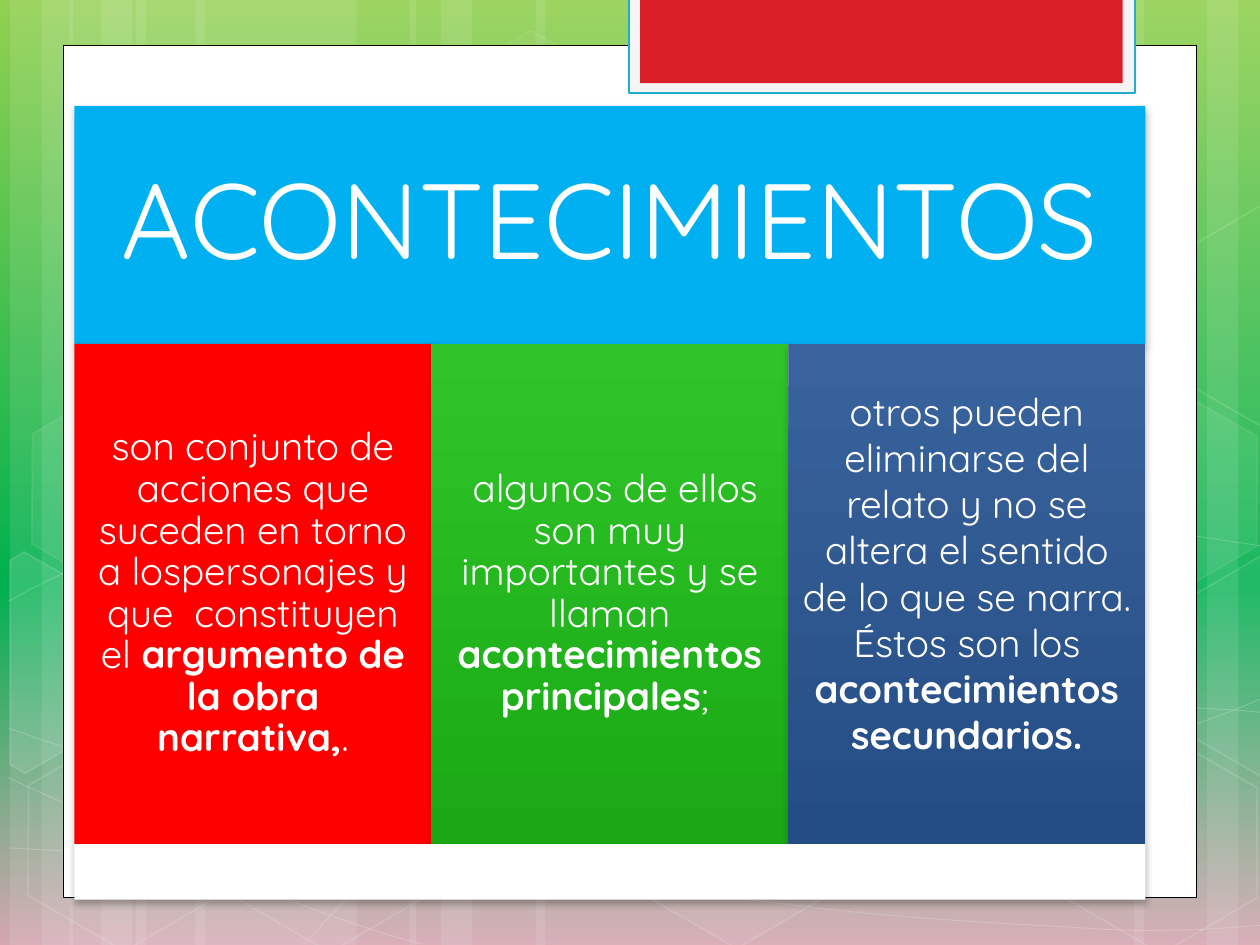
from lxml import etree
from pptx import Presentation
from pptx.dml.color import RGBColor
from pptx.enum.shapes import MSO_SHAPE
from pptx.enum.text import MSO_ANCHOR, MSO_AUTO_SIZE, PP_ALIGN
from pptx.oxml.ns import qn
from pptx.util import Inches, Pt

RECTANGLE = MSO_SHAPE.RECTANGLE
HEXAGON = MSO_SHAPE.HEXAGON
MIDDLE = MSO_ANCHOR.MIDDLE
CENTER = PP_ALIGN.CENTER
NO_AUTOFIT = MSO_AUTO_SIZE.NONE

WIDTH, HEIGHT = 10, 7.5
FONT = "Quicksand"
WHITE = "FFFFFF"
HARD_SPACE = chr(160)
LEFT, TABLE_WIDTH = 0.59, 8.5
TITLE_TOP, CARD_TOP, FOOT_TOP, FOOT_END = 0.84, 2.73, 6.7, 7.14

STRIPES = [(1.08, 1.75), (0.08, 0.5), (0.33, 0.83), (1.55, 1.75), (0.55, 0.5), (0.8, 0.83),
           (7.33, 1.75), (9.58, 0.5), (9, 0.83), (4.25, 3.08), (3.25, 0.5), (3.5, 0.83)]

CURVES = [
    [(0.07, 6.73), (0.61, 6.76), (1.15, 6.79), (1.9, 6.78), (2.65, 6.77), (3.58, 6.75),
     (4.58, 6.65), (5.58, 6.55), (7, 6.36), (7.92, 6.17), (8.83, 5.98), (9.77, 5.68), (10.07, 5.51)],
    [(0.07, 4.77), (0.36, 4.61), (0.65, 4.46), (1.21, 4.31), (1.78, 4.16), (2.59, 3.94),
     (3.47, 3.87), (4.36, 3.8), (5.44, 3.79), (6.54, 3.87), (7.64, 3.95), (9.47, 4.26), (10.07, 4.34)],
    [(0.06, 6.17), (1.27, 6.72), (2.47, 7.27), (3.34, 7.49)],
    [(0.07, 5.78), (0.38, 5.89), (0.7, 6), (1.28, 6.16), (1.86, 6.31), (2.73, 6.56),
     (3.57, 6.73), (4.4, 6.9), (5.45, 7.08), (6.28, 7.18), (7.11, 7.29), (8, 7.33),
     (8.53, 7.36), (9.05, 7.4), (9.19, 7.38), (9.45, 7.38), (9.71, 7.37), (9.89, 7.35), (10.07, 7.34)],
    [(2.42, 7.49), (2.6, 7.29), (2.78, 7.09), (3.02, 6.91), (3.26, 6.73), (3.6, 6.53),
     (3.88, 6.39), (4.16, 6.25), (4.33, 6.19), (4.7, 6.09), (5.06, 5.99), (5.73, 5.85),
     (6.08, 5.78), (6.44, 5.71), (6.49, 5.71), (6.8, 5.69), (7.11, 5.66), (7.6, 5.63),
     (7.94, 5.62), (8.29, 5.61), (8.86, 5.62), (8.86, 5.62), (9.08, 5.62), (9.3, 5.62),
     (9.53, 5.62), (9.71, 5.63), (9.88, 5.64), (9.97, 5.65), (10.06, 5.66), (10.03, 5.65), (10.06, 5.66)],
]

HEXAGONS = [(3.34, 0.36, 4, 8), (4.97, 5.89, 6, 12), (0.11, 5.91, 0, 12),
            (0.14, 3.12, 7, 8), (1.74, 5.92, 0, 12), (7.53, 4.53, 10, 12),
            (8.34, 5.93, 0, 12), (8.34, 3.14, 7, 8)]

CUT_HEXAGONS = [
    ([(0.08, 4.45), (0.19, 4.38), (0.96, 4.82), (0.95, 5.7), (0.2, 6.14), (0.08, 6.07)], 10),
    ([(9.26, 4.85), (10.01, 4.41), (10.09, 4.46), (10.09, 6.13), (10.02, 6.17), (9.26, 5.73)], 4),
    ([(9.26, 2.07), (10.01, 1.63), (10.1, 1.68), (10.09, 3.35), (10.02, 3.39), (9.26, 2.95)], 0),
]

CARDS = [
    (["FF0000"], 0.9, 0.09, [
        ("son conjunto de acciones que suceden en torno a lospersonajes y que  constituyen el"
         + HARD_SPACE, False),
        ("argumento de la obra narrativa,", True), (".", False)]),
    (["2FC529", "1AA914"], 0.9, 0.09, [
        (HARD_SPACE, True), ("algunos de ellos son muy importantes y se llaman ", False),
        ("acontecimientos principales", True), ("; ", False)]),
    (["39639D", "254D85"], 1, 0.43, [
        ("otros pueden eliminarse del relato y no se altera el sentido de lo que se narra. Éstos son los ", False),
        ("acontecimientos secundarios.", True)]),
]


def color(value):
    return RGBColor.from_string(value)


def add_color(parent, value, alpha=100):
    node = etree.SubElement(parent, qn("a:srgbClr"), val=value)
    if alpha < 100:
        etree.SubElement(node, qn("a:alpha"), val=str(alpha * 1000))


def paint(fill, value, alpha=100):
    fill.solid()
    fill.fore_color.rgb = color(value)
    if alpha < 100:
        solid = fill._xPr.find(qn("a:solidFill"))
        solid.clear()
        add_color(solid, value, alpha)


def paint_gradient(fill, stops):
    fill.gradient()
    fill.gradient_angle = 270
    stop_list = fill._xPr.find(".//" + qn("a:gsLst"))
    stop_list.clear()
    for position, value in stops:
        add_color(etree.SubElement(stop_list, qn("a:gs"), pos=str(position * 1000)), value)


def style_shape(shape, fills=(), alpha=100, line=None, line_width=1, line_alpha=100, shadow=False):
    if len(fills) > 1:
        paint_gradient(shape.fill, [(0, fills[0]), (100, fills[1])])
    elif fills and alpha:
        paint(shape.fill, fills[0], alpha)
    else:
        shape.fill.background()
    if line:
        shape.line.width = Pt(line_width)
        paint(shape.line.fill, line, line_alpha)
    else:
        shape.line.fill.background()
    shape.shadow.inherit = False
    if shadow:
        effects = shape.element.spPr.find(qn("a:effectLst"))
        outer = etree.SubElement(effects, qn("a:outerShdw"), blurRad=str(Pt(4)),
                                 dist=str(Pt(2)), dir="5400000", rotWithShape="0")
        add_color(outer, "000000", 28)


def place(shape, left, top, width, height):
    shape.left, shape.top = Inches(left), Inches(top)
    shape.width, shape.height = Inches(width), Inches(height)


def add_block(page, kind, left, top, width, height, **style):
    shape = page.shapes.add_shape(kind, *map(Inches, (left, top, width, height)))
    style_shape(shape, **style)
    return shape


def add_outline(page, points, close, **style):
    corners = [(Inches(x), Inches(y)) for x, y in points]
    builder = page.shapes.build_freeform(*corners[0])
    builder.add_line_segments(corners[1:], close=close)
    outline = builder.convert_to_shape()
    style_shape(outline, **style)
    return outline


def add_curve(page, knots, **style):
    curve = add_outline(page, knots, False, **style)
    segments = list(curve.element.iter(qn("a:lnTo")))
    for start in range(0, len(segments), 3):
        bend = etree.SubElement(segments[start].getparent(), qn("a:cubicBezTo"))
        for segment in segments[start:start + 3]:
            bend.append(segment[0])
            segment.getparent().remove(segment)


def write_text(box, spans, size, margin, bottom, spacing):
    frame = box.text_frame
    frame.word_wrap = True
    frame.auto_size = NO_AUTOFIT
    frame.vertical_anchor = MIDDLE
    frame.margin_left = frame.margin_right = frame.margin_top = Inches(margin)
    frame.margin_bottom = Inches(bottom)
    para = frame.paragraphs[0]
    para.alignment = CENTER
    para.line_spacing = spacing
    for text, bold in spans:
        span = para.add_run()
        span.text = text
        span.font.name, span.font.size, span.font.bold = FONT, Pt(size), bold
        span.font.color.rgb = color(WHITE)


def add_backdrop(page):
    paint_gradient(page.background.fill, [(0, "92D050"), (62, "00B050"), (100, "D5A7B1")])
    for left, width in STRIPES:
        add_block(page, RECTANGLE, left, 0, width, HEIGHT, fills=[WHITE], alpha=10)
    for knots in CURVES:
        add_curve(page, knots, line=WHITE, line_width=0.5, line_alpha=20)
    for left, top, alpha, line_alpha in HEXAGONS:
        hexagon = add_block(page, HEXAGON, left, top, 1.75, 1.52, fills=[WHITE], alpha=alpha,
                            line=WHITE, line_alpha=line_alpha)
        hexagon.adjustments[0] = 0.285
        hexagon.rotation = 30
    for points, alpha in CUT_HEXAGONS:
        add_outline(page, points, True, fills=[WHITE], alpha=alpha, line=WHITE, line_alpha=12)


def add_frame(page):
    add_block(page, RECTANGLE, 0.5, 0.36, 9, 6.76, fills=[WHITE], line="000000", line_width=0.5)
    add_block(page, RECTANGLE, 4.99, -0.02, 4.02, 0.76, fills=["F5F5F5"], line="1FAECD", line_width=1.25)
    add_block(page, RECTANGLE, 5.08, -0.02, 3.83, 0.68, fills=["DA1F28"])


def add_title(page, text):
    title = page.shapes.title
    place(title, LEFT, TITLE_TOP, TABLE_WIDTH, CARD_TOP - TITLE_TOP)
    style_shape(title, fills=["00B0F0"], shadow=True)
    write_text(title, [(text, False)], 61, 0.25, 0.25, 0.9)
    title.element.getparent().append(title.element)


def add_cards(page):
    width = TABLE_WIDTH / len(CARDS)
    for column, (fills, spacing, bottom, spans) in enumerate(CARDS):
        card = add_block(page, RECTANGLE, LEFT + column * width, CARD_TOP, width,
                         FOOT_TOP - CARD_TOP, fills=fills, shadow=True)
        write_text(card, spans, 22, 0.09, bottom, spacing)
    add_block(page, RECTANGLE, LEFT, FOOT_TOP, TABLE_WIDTH, FOOT_END - FOOT_TOP,
              fills=[WHITE], shadow=True)


def main():
    deck = Presentation()
    deck.slide_width, deck.slide_height = Inches(WIDTH), Inches(HEIGHT)
    page = deck.slides.add_slide(deck.slide_layouts[5])
    add_backdrop(page)
    add_frame(page)
    add_title(page, "ACONTECIMIENTOS")
    add_cards(page)
    deck.save("out.pptx")


if __name__ == "__main__":
    main()
